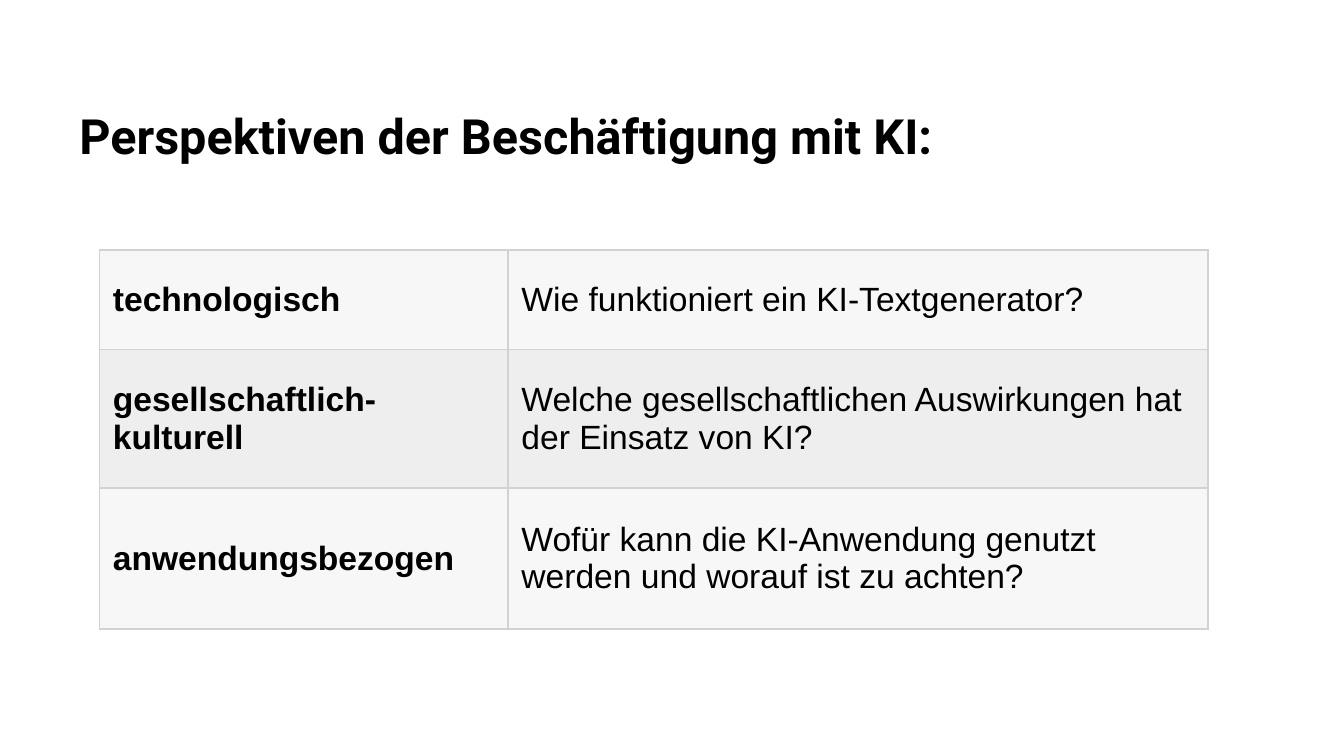
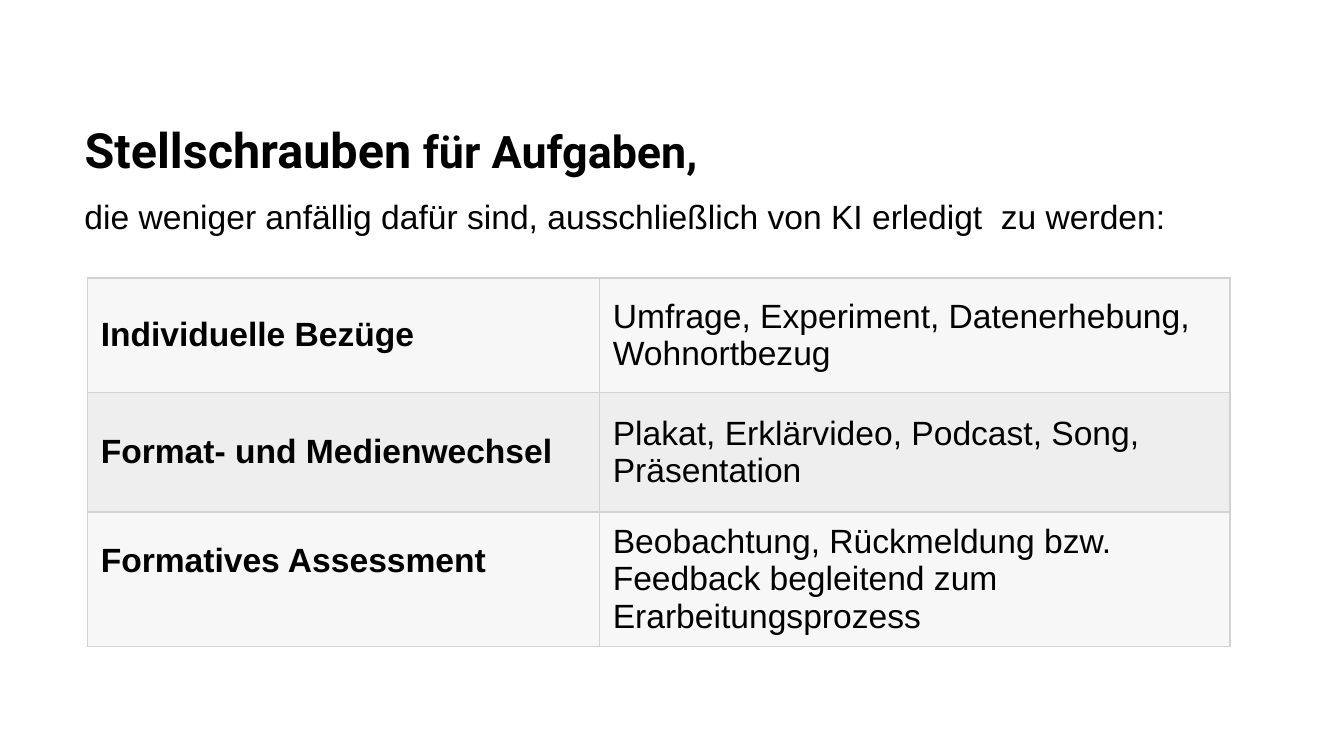
from lxml import etree
from pptx import Presentation
from pptx.dml.color import RGBColor
from pptx.enum import text
from pptx.oxml import ns
from pptx.util import Inches, Pt

BLACK = RGBColor(0x00, 0x00, 0x00)
BORDER = RGBColor(0xD2, 0xD2, 0xD2)
ROW_FILLS = (RGBColor(0xF7, 0xF7, 0xF7), RGBColor(0xEE, 0xEE, 0xEE))
TITLE_FONT = "Roboto"
BODY_FONT = "Arial"
TITLE_ONLY = 5

PERSPECTIVES = [
    ("technologisch", "Wie funktioniert ein KI-Textgenerator?"),
    ("gesellschaftlich-kulturell",
     "Welche gesellschaftlichen Auswirkungen hat der Einsatz von KI?"),
    ("anwendungsbezogen",
     "Wofür kann die KI-Anwendung genutzt werden und worauf ist zu achten?"),
]
TASK_LEVERS = [
    ("Individuelle Bezüge", "Umfrage, Experiment, Datenerhebung, Wohnortbezug"),
    ("Format- und Medienwechsel", "Plakat, Erklärvideo, Podcast, Song, Präsentation"),
    ("Formatives Assessment",
     "Beobachtung, Rückmeldung bzw. Feedback begleitend zum Erarbeitungsprozess"),
]


def set_font(font, name, size, bold=False):
    font.name = name
    font.size = Pt(size)
    font.bold = bold
    font.color.rgb = BLACK


def add_titled_slide(deck, left, top, title):
    slide = deck.slides.add_slide(deck.slide_layouts[TITLE_ONLY])
    box = slide.shapes.title
    box.left, box.top = Inches(left), Inches(top)
    box.width, box.height = Inches(8.82), Inches(0.57)
    frame = box.text_frame
    frame.margin_left = frame.margin_right = 0
    frame.margin_top = frame.margin_bottom = 0
    frame.vertical_anchor = text.MSO_ANCHOR.TOP
    frame.auto_size = text.MSO_AUTO_SIZE.NONE
    para = frame.paragraphs[0]
    para.text = title
    para.alignment = text.PP_ALIGN.LEFT
    set_font(para.font, TITLE_FONT, 26, bold=True)
    return slide


def add_subtitle(slide, words):
    box = slide.shapes.add_textbox(Inches(0.53), Inches(1.41), Inches(8.61), Inches(0.4))
    box.text_frame.word_wrap = True
    para = box.text_frame.paragraphs[0]
    para.text = words
    set_font(para.font, BODY_FONT, 18)


def add_borders(cell):
    properties = cell._tc.get_or_add_tcPr()
    for side in ("lnL", "lnR", "lnT", "lnB"):
        line = etree.SubElement(properties, ns.qn(f"a:{side}"), w=str(Pt(1)))
        fill = etree.SubElement(line, ns.qn("a:solidFill"))
        etree.SubElement(fill, ns.qn("a:srgbClr"), val=str(BORDER))


def add_grid(slide, left, top, widths, heights, rows):
    """Add a table with a bold first column and alternating row fills."""
    table = slide.shapes.add_table(
        len(rows), len(widths), Inches(left), Inches(top),
        Inches(sum(widths)), Inches(sum(heights))).table
    table.first_row = table.horz_banding = False
    for column, width in zip(table.columns, widths):
        column.width = Inches(width)
    for r, (height, words) in enumerate(zip(heights, rows)):
        table.rows[r].height = Inches(height)
        for c, content in enumerate(words):
            cell = table.cell(r, c)
            cell.vertical_anchor = text.MSO_ANCHOR.MIDDLE
            para = cell.text_frame.paragraphs[0]
            para.text = content
            set_font(para.font, BODY_FONT, 18, bold=c == 0)
            add_borders(cell)
            cell.fill.solid()
            cell.fill.fore_color.rgb = ROW_FILLS[r % 2]
    return table


def add_perspectives_slide(deck):
    slide = add_titled_slide(deck, 0.59, 0.79, "Perspektiven der Beschäftigung mit KI:")
    add_grid(slide, 0.74, 1.86, (3.04, 5.21), (0.74, 1.03, 1.05), PERSPECTIVES)


def add_task_levers_slide(deck):
    slide = add_titled_slide(deck, 0.63, 0.89, "Stellschrauben")
    span = slide.shapes.title.text_frame.paragraphs[0].add_run()
    span.text = " für Aufgaben,"
    span.font.size = Pt(24)
    table = add_grid(slide, 0.65, 2.07, (3.81, 4.69), (0.85, 0.89, 1), TASK_LEVERS)
    # The last label sits half a line above the middle of its row.
    table.cell(2, 0).margin_bottom = Inches(0.33)
    add_subtitle(slide, "die weniger anfällig dafür sind, ausschließlich von KI "
                        "erledigt  zu werden:")


def main():
    deck = Presentation()
    deck.slide_width = Inches(10)
    deck.slide_height = Inches(10 * 9 / 16)
    add_perspectives_slide(deck)
    add_task_levers_slide(deck)
    deck.save("out.pptx")


if __name__ == "__main__":
    main()
